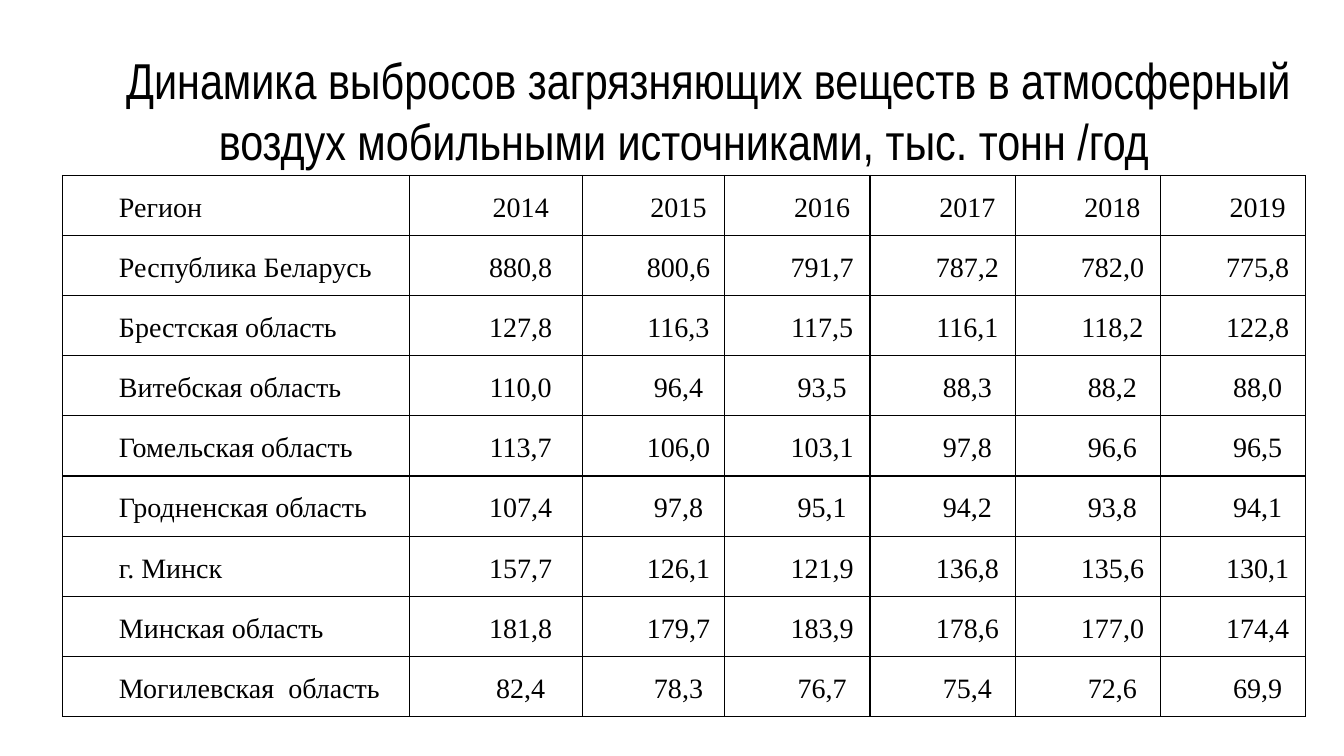
from lxml import etree
from pptx import Presentation
from pptx.dml.color import RGBColor
from pptx.enum.text import MSO_ANCHOR, PP_ALIGN
from pptx.oxml.ns import qn
from pptx.util import Inches, Pt

LEFT, CENTER, JUSTIFY = PP_ALIGN.LEFT, PP_ALIGN.CENTER, PP_ALIGN.JUSTIFY
MIDDLE, BOTTOM = MSO_ANCHOR.MIDDLE, MSO_ANCHOR.BOTTOM

TITLE = ("Динамика выбросов загрязняющих веществ в атмосферный "
         "воздух мобильными источниками, тыс. тонн /год")
EMISSIONS = [
    ("Регион", "2014", "2015", "2016", "2017", "2018", "2019"),
    ("Республика Беларусь", "880,8", "800,6", "791,7", "787,2", "782,0", "775,8"),
    ("Брестская область", "127,8", "116,3", "117,5", "116,1", "118,2", "122,8"),
    ("Витебская область", "110,0", "96,4", "93,5", "88,3", "88,2", "88,0"),
    ("Гомельская область", "113,7", "106,0", "103,1", "97,8", "96,6", "96,5"),
    ("Гродненская область", "107,4", "97,8", "95,1", "94,2", "93,8", "94,1"),
    ("г. Минск", "157,7", "126,1", "121,9", "136,8", "135,6", "130,1"),
    ("Минская область", "181,8", "179,7", "183,9", "178,6", "177,0", "174,4"),
    ("Могилевская  область", "82,4", "78,3", "76,7", "75,4", "72,6", "69,9"),
]
COLUMN_WIDTHS = [3.44, 1.72, 1.41] + [1.44] * 4
TABLE_HEIGHT = 5.37


def rgb(value):
    return RGBColor.from_string(value)


class EmissionsSlide:
    """Holds the style and the slide, and adds its title and table."""

    ink, paper = "000000", "FFFFFF"
    title_font, table_font = "Arial Narrow", "Times New Roman"
    first_line_indent = Inches(0.49)

    def __init__(self, presentation):
        self.slide = presentation.slides.add_slide(presentation.slide_layouts[6])

    def add_text(self, paragraph, text, font, size, align):
        paragraph.alignment = align
        properties = paragraph._p.get_or_add_pPr()
        properties.set("marL", "0")
        properties.set("indent", str(self.first_line_indent))
        run = paragraph.add_run()
        run.text = text
        run.font.name = font
        run.font.size = Pt(size)
        run.font.color.rgb = rgb(self.ink)

    def title(self, text, left, top, width, height):
        box = self.slide.shapes.add_textbox(
            Inches(left), Inches(top), Inches(width), Inches(height))
        frame = box.text_frame
        frame.word_wrap = True
        frame.vertical_anchor = BOTTOM
        self.add_text(frame.paragraphs[0], text, self.title_font, 36, CENTER)

    def border(self, cell):
        properties = cell._tc.get_or_add_tcPr()
        for position, side in enumerate(("a:lnL", "a:lnR", "a:lnT", "a:lnB")):
            line = etree.Element(qn(side), w=str(Pt(1)))
            fill = etree.SubElement(line, qn("a:solidFill"))
            etree.SubElement(fill, qn("a:srgbClr"), val=self.ink)
            properties.insert(position, line)

    def cell(self, cell, text, align, filled):
        cell.vertical_anchor = MIDDLE
        cell.margin_left = cell.margin_right = Inches(0.07)
        cell.margin_top = cell.margin_bottom = 0
        if filled:
            cell.fill.solid()
            cell.fill.fore_color.rgb = rgb(self.paper)
        else:
            cell.fill.background()
        paragraph = cell.text_frame.paragraphs[0]
        paragraph.line_spacing = 1.15
        self.add_text(paragraph, text, self.table_font, 20, align)
        self.border(cell)

    def table(self, rows, left, top, widths, height):
        table = self.slide.shapes.add_table(
            len(rows), len(widths), Inches(left), Inches(top),
            Inches(sum(widths)), Inches(height)).table
        table.first_row = table.horz_banding = False
        for column, width in zip(table.columns, widths):
            column.width = Inches(width)
        for r, values in enumerate(rows):
            region_align = JUSTIFY if r else LEFT
            for c, value in enumerate(values):
                self.cell(table.cell(r, c), value,
                          CENTER if c else region_align, r > 1 and c > 0)


def main():
    presentation = Presentation()
    presentation.slide_width = Inches(13.33)
    presentation.slide_height = Inches(7.5)
    slide = EmissionsSlide(presentation)
    slide.table(EMISSIONS, 0.62, 1.74, COLUMN_WIDTHS, TABLE_HEIGHT)
    slide.title(TITLE, 0.39, 0.44, 12.79, 1.3)
    presentation.save("out.pptx")


if __name__ == "__main__":
    main()
